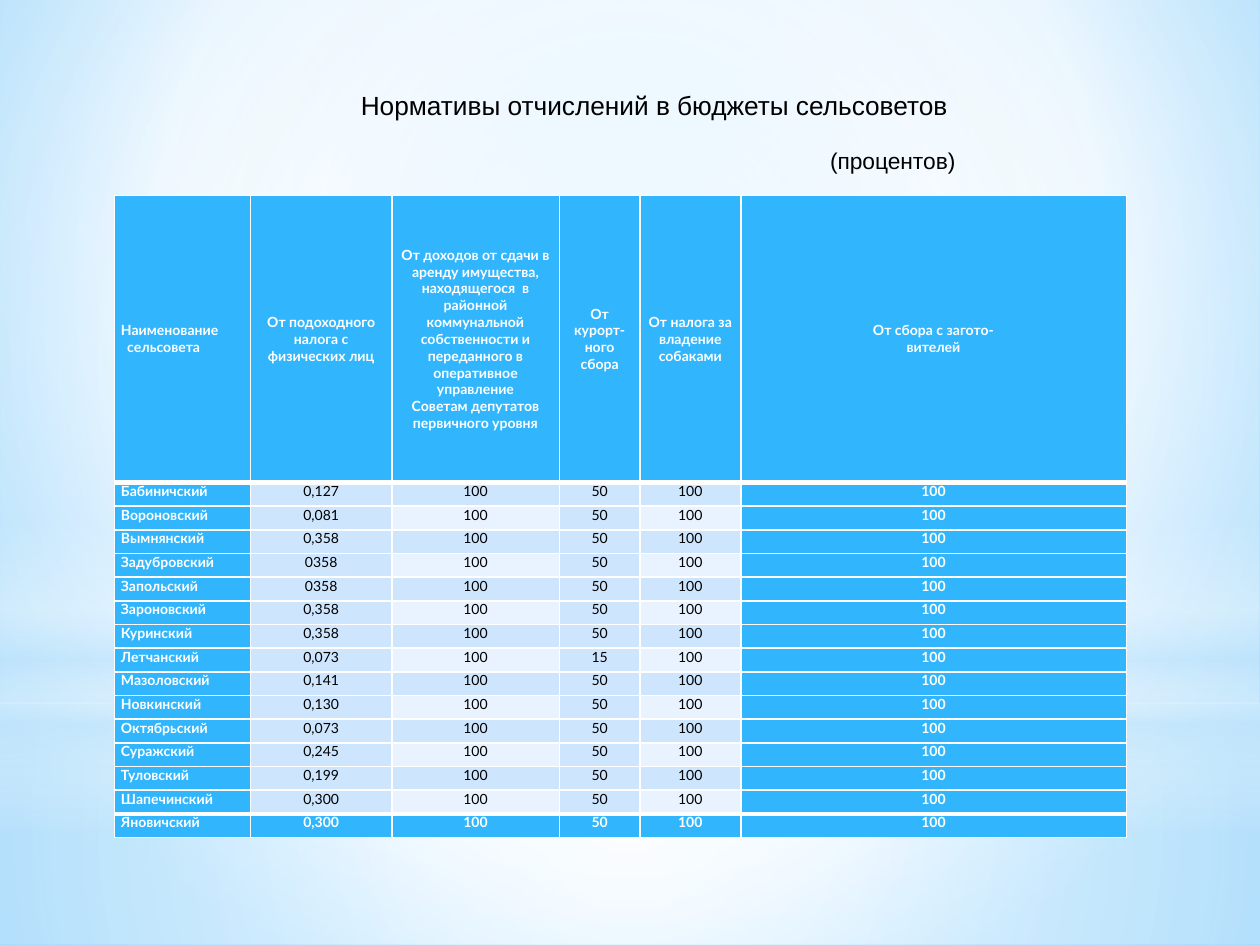
from lxml.etree import SubElement
from pptx import Presentation
from pptx.dml.color import RGBColor
from pptx.enum.shapes import MSO_SHAPE
from pptx.enum.text import MSO_ANCHOR, PP_ALIGN
from pptx.oxml import parse_xml
from pptx.oxml.ns import nsdecls, qn
from pptx.util import Inches, Pt

WHITE = RGBColor(0xFF, 0xFF, 0xFF)
BLACK = RGBColor(0, 0, 0)
BLUE = RGBColor(0x31, 0xB6, 0xFD)
LIGHT = RGBColor(0xCE, 0xE5, 0xFE)
PALE = RGBColor(0xE8, 0xF3, 0xFF)
ICE = RGBColor(0xC6, 0xE7, 0xFC)
SKY = RGBColor(0xB0, 0xE0, 0xFF)
DEEP = RGBColor(0x6B, 0xC5, 0xFF)

HEADS = [
    "Наименование\nсельсовета",
    "От подоходного налога с физических лиц",
    "От доходов от сдачи в аренду имущества, находящегося  в районной "
    "коммунальной собственности и переданного в оперативное управление\n"
    "Советам депутатов первичного уровня",
    "От курорт-\nного сбора",
    "От налога за владение собаками",
    "От сбора с загото-\nвителей",
]
RATES = {
    "Бабиничский": "0,127", "Вороновский": "0,081", "Вымнянский": "0,358",
    "Задубровский": "0358", "Запольский": "0358", "Зароновский": "0,358",
    "Куринский": "0,358", "Летчанский": "0,073", "Мазоловский": "0,141",
    "Новкинский": "0,130", "Октябрьский": "0,073", "Суражский": "0,245",
    "Туловский": "0,199", "Шапечинский": "0,300", "Яновичский": "0,300",
}
RESORT = {"Летчанский": "15"}
WIDTHS = [1.08, 1.12, 1.33, 0.64, 0.8, 3.06]
HEAD = 2.28


def write(par, text, font="Lato", size=8, color=BLACK, bold=False,
          align=PP_ALIGN.CENTER, before=0):
    par.alignment = align
    par.space_before = Pt(before)
    run = par.add_run()
    run.text = text
    run.font.name = font
    run.font.size = Pt(size)
    run.font.bold = bold
    run.font.color.rgb = color


def blend(stops, focus=None, angle=90):
    grad = parse_xml(f'<a:gradFill {nsdecls("a")} rotWithShape="1"/>')
    group = SubElement(grad, qn("a:gsLst"))
    for place, color, alpha in stops:
        stop = SubElement(group, qn("a:gs"), pos=str(place * 1000))
        tone = SubElement(stop, qn("a:srgbClr"), val=str(color))
        if alpha < 100:
            SubElement(tone, qn("a:alpha"), val=str(alpha * 1000))
    if focus:
        way = SubElement(grad, qn("a:path"), path="circle")
        sides = {side: str(part * 1000) for side, part in zip("ltrb", focus)}
        SubElement(way, qn("a:fillToRect"), **sides)
    else:
        SubElement(grad, qn("a:lin"), ang=str(angle * 60000), scaled="0")
    return grad


class Page:
    def __init__(self, deck, font="Arial"):
        self.font = font
        self.slide = deck.slides.add_slide(deck.slide_layouts[6])

    def ground(self, grad):
        self.slide.background.fill.solid()
        back = next(self.slide._element.iter(qn("p:bgPr")))
        back.replace(back[0], grad)

    def glow(self, kind, box, grad):
        shape = self.slide.shapes.add_shape(kind, *map(Inches, box))
        shape.shadow.inherit = False
        shape.line.fill.background()
        shape._element.spPr.insert(2, grad)

    def title(self, box, lines):
        frame = self.slide.shapes.add_textbox(*map(Inches, box)).text_frame
        frame.word_wrap = True
        frame.vertical_anchor = MSO_ANCHOR.MIDDLE
        for at, (text, size, before) in enumerate(lines):
            par = frame.add_paragraph() if at else frame.paragraphs[0]
            write(par, text, font=self.font, size=size, before=before,
                  align=PP_ALIGN.RIGHT)

    def edge(self, cell, top, bottom):
        props = cell._tc.get_or_add_tcPr()
        for side, width in zip("LRTB", (1, 1, top, bottom)):
            line = SubElement(props, qn(f"a:ln{side}"), w=str(Pt(width)))
            fill = SubElement(line, qn("a:solidFill"))
            SubElement(fill, qn("a:srgbClr"), val=str(WHITE))

    def cell(self, cell, text, row, col, last):
        self.edge(cell, 3 if row in (1, last) else 1,
                  3 if row in (0, last - 1) else 1)
        strong = row in (0, last) or col in (0, 5)
        tint = PALE if row % 2 == 0 and col in (2, 4) else LIGHT
        cell.fill.solid()
        cell.fill.fore_color.rgb = BLUE if strong else tint
        cell.margin_left = cell.margin_right = Inches(0.05)
        cell.margin_top = cell.margin_bottom = 0
        cell.vertical_anchor = MSO_ANCHOR.TOP if row else MSO_ANCHOR.MIDDLE
        frame = cell.text_frame
        for at, line in enumerate(text.split("\n")):
            par = frame.add_paragraph() if at else frame.paragraphs[0]
            write(par, line, color=WHITE if strong else BLACK, bold=strong,
                  align=PP_ALIGN.CENTER if col else PP_ALIGN.LEFT)
            if at and col == 0:
                par._p.get_or_add_pPr().set("marL", str(Inches(0.05)))

    def table(self, box, rows):
        table = self.slide.shapes.add_table(
            len(rows), len(WIDTHS), *map(Inches, box)).table
        table.horz_banding = False
        for col, width in zip(table.columns, WIDTHS):
            col.width = Inches(width)
        last = len(rows) - 1
        for at, texts in enumerate(rows):
            high = (box[3] - HEAD) / last if at else HEAD
            table.rows[at].height = Inches(high)
            for col, text in enumerate(texts):
                self.cell(table.cell(at, col), text, at, col, last)


def main():
    deck = Presentation()
    deck.slide_width, deck.slide_height = Inches(10), Inches(7.5)
    page = Page(deck)
    mid = (50, 50, 50, 50)
    page.ground(blend([(0, SKY, 100), (60, WHITE, 100), (100, DEEP, 100)],
                      (20, 10, 20, 60)))
    page.glow(MSO_SHAPE.RECTANGLE, (0, 5.58, 10, 1.92), blend(
        [(0, WHITE, 91), (37, WHITE, 76), (100, ICE, 79)], mid))
    page.glow(MSO_SHAPE.RECTANGLE, (0, 0, 10, 5.58), blend(
        [(0, WHITE, 89), (48, WHITE, 62), (100, ICE, 79)], mid))
    page.glow(MSO_SHAPE.RECTANGLE, (0, 4.12, 10, 2.5), blend(
        [(0, WHITE, 0), (29, WHITE, 30), (45, ICE, 40),
         (55, WHITE, 26), (65, ICE, 60), (100, WHITE, 0)]))
    page.glow(MSO_SHAPE.OVAL, (0, 1.75, 10, 5.58), blend(
        [(0, WHITE, 100), (56, WHITE, 0)], mid))
    rows = [HEADS] + [[name, rate, "100", RESORT.get(name, "50"), "100", "100"]
                      for name, rate in RATES.items()]
    page.table((0.91, 1.55, 8.03, 5.1), rows)
    page.title((1.46, 0.65, 6.22, 0.79), [
        ("Нормативы отчислений в бюджеты сельсоветов ", 15, 0),
        ("(процентов)", 13, 15)])
    deck.save("out.pptx")


if __name__ == "__main__":
    main()
